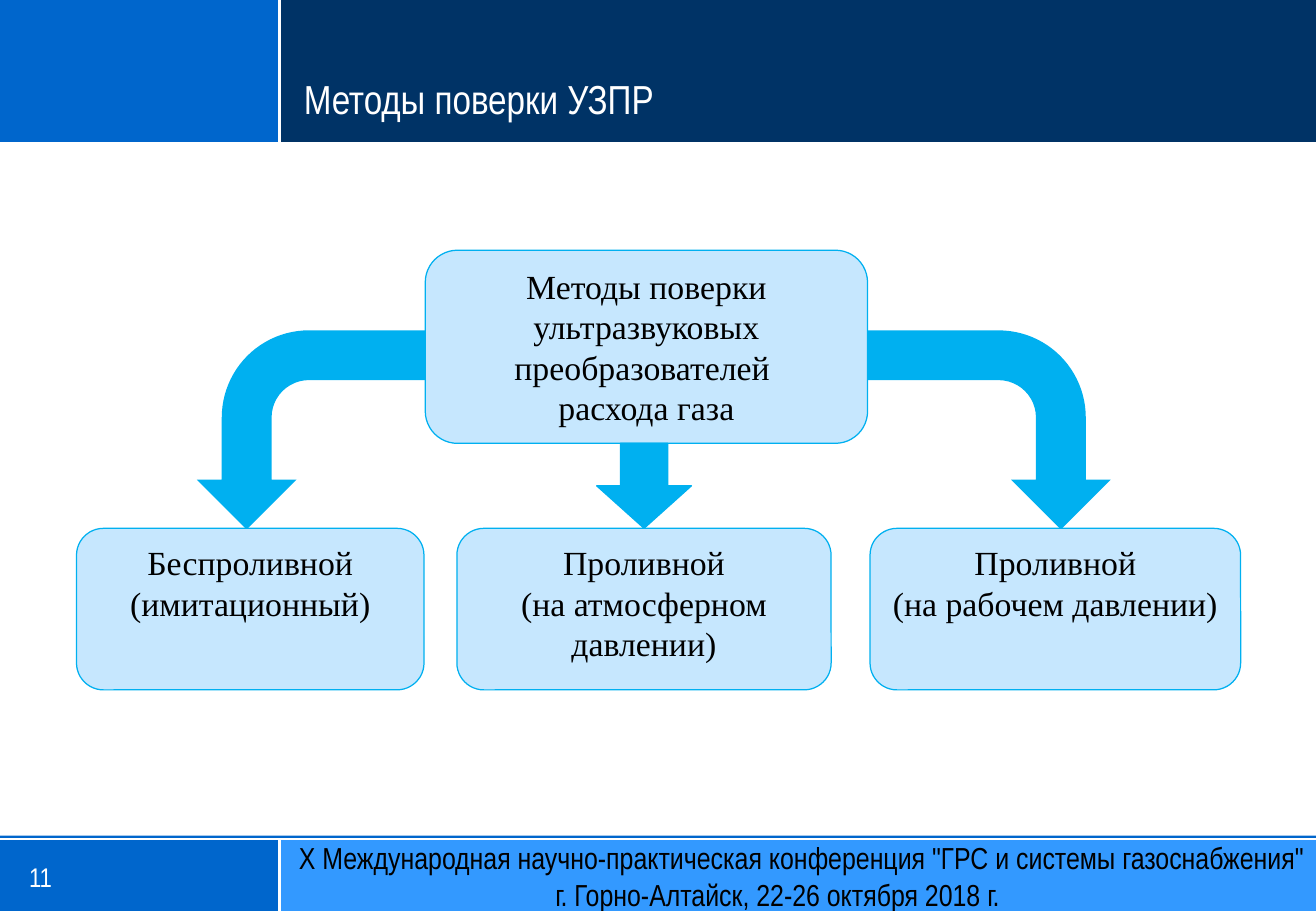
from lxml import etree
from pptx import Presentation
from pptx.dml.color import RGBColor
from pptx.enum import shapes, text
from pptx.oxml.ns import qn
from pptx.util import Inches, Pt

TITLE = "Методы поверки УЗПР"
PAGE = "11"
CONFERENCE = ['X Международная научно-практическая конференция "ГРС и системы газоснабжения"',
              "г. Горно-Алтайск, 22-26 октября 2018 г."]
ROOT = ["Методы поверки ультразвуковых преобразователей ", "расхода газа"]
# left, width, lines
METHODS = [
    (0.63, 2.86, ["Беспроливной", "(имитационный)"]),
    (3.76, 3.08, ["Проливной", "(на атмосферном давлении)"]),
    (7.16, 3.05, ["Проливной", "(на рабочем давлении)"]),
]

THEME = {
    "blue": "0066CC", "navy": "003366", "sky": "3399FF", "white": "FFFFFF",
    "black": "000000", "box": "C6E7FE", "arrow": "00B0F0",
    "frame_font": "Arial Narrow", "box_font": "Times New Roman",
    "title": 24, "page": 16, "footer": 18, "method": 20,
    "rule": 1.25, "outline": 0.75,
}
WIDTH, HEIGHT = 10.83, 7.5
SPLIT, HEADER, FOOTER = 2.3, 1.18, 6.91
ROOT_BOX = (3.5, 2.06, 3.64, 1.59)
METHOD_TOP, METHOD_HEIGHT = 4.35, 1.33
SHAPE = shapes.MSO_SHAPE
ANCHOR = text.MSO_ANCHOR

prs = Presentation()
prs.slide_width, prs.slide_height = Inches(WIDTH), Inches(HEIGHT)
slide = prs.slides.add_slide(prs.slide_layouts[6])


def color(name):
    return RGBColor.from_string(THEME[name])


def add_block(kind, box, fill, outline=None):
    block = slide.shapes.add_shape(kind, *map(Inches, box))
    block.shadow.inherit = False
    block.fill.solid()
    block.fill.fore_color.rgb = color(fill)
    if outline:
        block.line.color.rgb = color(outline)
        block.line.width = Pt(THEME["outline"])
    else:
        block.line.fill.background()
    return block


def add_rule(x1, y1, x2, y2):
    rule = slide.shapes.add_connector(shapes.MSO_CONNECTOR.STRAIGHT,
                                      *map(Inches, (x1, y1, x2, y2)))
    rule.line.color.rgb = color("white")
    rule.line.width = Pt(THEME["rule"])
    etree.SubElement(rule.element.spPr, qn("a:effectLst"))


def write(shape, lines, font, size, ink, anchor, align=None):
    frame = shape.text_frame
    frame.word_wrap = True
    frame.vertical_anchor = anchor
    frame.text = "\n".join(lines)
    for paragraph in frame.paragraphs:
        paragraph.alignment = align
        for run in paragraph.runs:
            run.font.name = THEME[font]
            run.font.size = Pt(THEME[size])
            run.font.color.rgb = color(ink)
    return frame


def add_label(box, lines, size, ink, anchor, insets=(0, 0)):
    label = slide.shapes.add_textbox(*map(Inches, box))
    frame = write(label, lines, "frame_font", size, ink, anchor)
    frame.margin_left = frame.margin_right = Inches(insets[0])
    frame.margin_top = frame.margin_bottom = Inches(insets[1])
    return frame


def add_method_box(box, lines):
    block = add_block(SHAPE.ROUNDED_RECTANGLE, box, "box", "arrow")
    write(block, lines, "box_font", "method", "black", ANCHOR.TOP,
          text.PP_ALIGN.CENTER)


def add_down_arrow(kind, box, outline=None, mirrored=False):
    """Turn a right-pointing arrow downwards; box is its place before the turn."""
    arrow = add_block(kind, box, "arrow", outline)
    arrow.rotation = 90
    if mirrored:
        arrow.element.spPr.find(qn("a:xfrm")).set("flipV", "1")


# Frame of the slide
background = slide.background.fill
background.solid()
background.fore_color.rgb = color("blue")
right_width = WIDTH - SPLIT
add_block(SHAPE.RECTANGLE, (SPLIT, FOOTER, right_width, HEIGHT - FOOTER), "sky")
add_block(SHAPE.RECTANGLE, (0, 0, SPLIT, HEADER), "blue")
add_block(SHAPE.RECTANGLE, (SPLIT, 0, right_width, HEADER), "navy")
add_block(SHAPE.RECTANGLE, (0, 1.17, WIDTH, 5.71), "white")
add_rule(SPLIT, 0, SPLIT, HEADER)
add_rule(SPLIT, FOOTER, SPLIT, HEIGHT)
for y in (HEADER, FOOTER):
    add_rule(0, y, WIDTH, y)

add_label((2.41, 0.24, 8.39, 0.81), [TITLE], "title", "white", ANCHOR.BOTTOM, (0.09, 0.04))
add_label((0.24, 6.96, 1.76, 0.52), [PAGE], "page", "white", ANCHOR.MIDDLE)
conference = add_label((2.46, 6.95, 8.35, 0.52), CONFERENCE, "footer", "black", ANCHOR.MIDDLE)
place_line = conference.paragraphs[1]
place_line.font.size = Pt(THEME["footer"])
place_line._p.get_or_add_pPr().set("marL", str(Inches(2.11)))

# Diagram
add_down_arrow(SHAPE.BENT_ARROW, (7.32, 2.54, 1.64, 2))
add_down_arrow(SHAPE.BENT_ARROW, (1.74, 2.6, 1.64, 1.88), mirrored=True)
add_method_box(ROOT_BOX, ROOT)
for left, width, lines in METHODS:
    add_method_box((left, METHOD_TOP, width, METHOD_HEIGHT), lines)
add_down_arrow(SHAPE.RIGHT_ARROW, (4.95, 3.61, 0.7, 0.78), "arrow")

prs.save("out.pptx")
